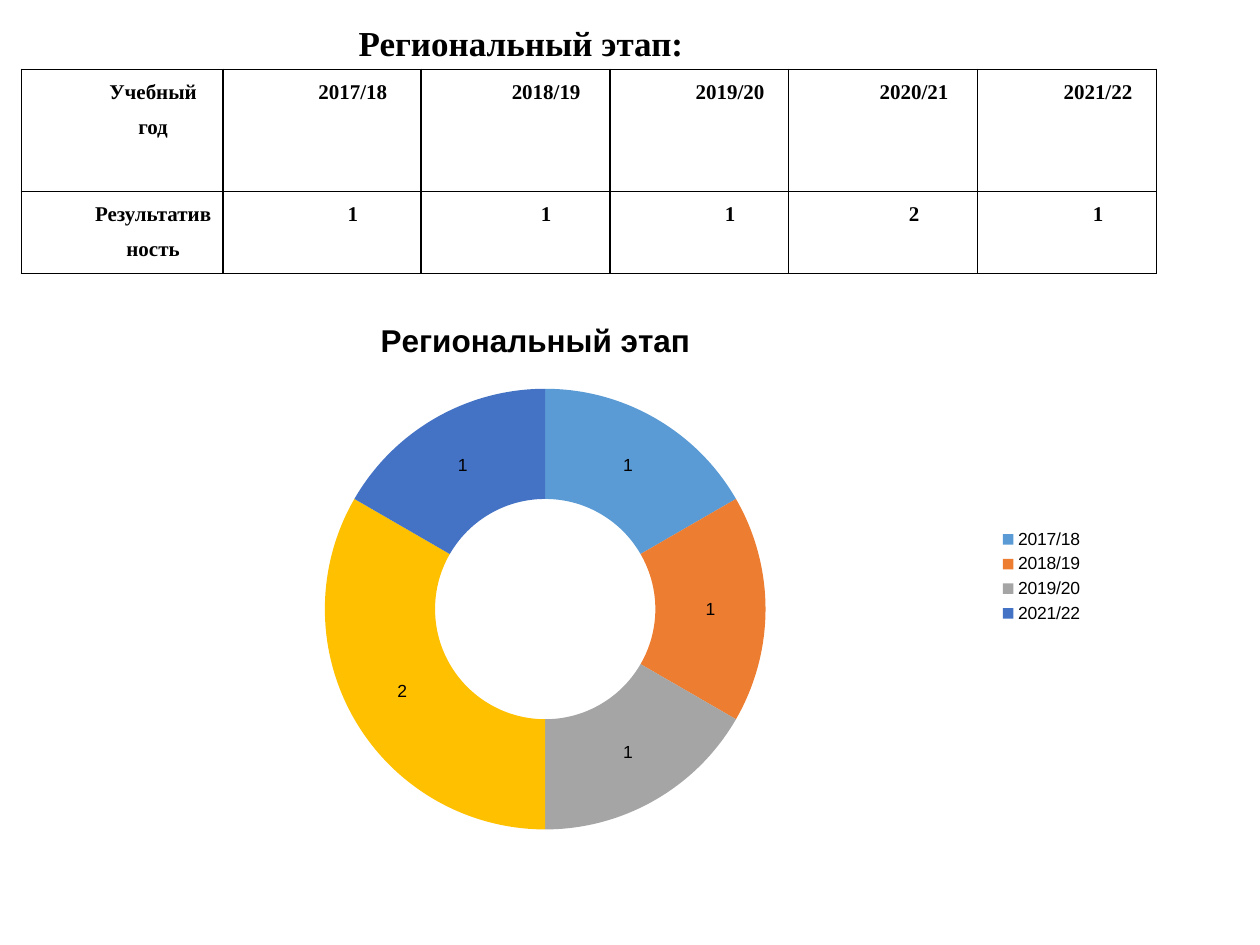
from lxml import etree
from pptx import Presentation, util as u
from pptx.chart.data import CategoryChartData
from pptx.dml.color import RGBColor
from pptx.enum import chart as ch, text
from pptx.oxml import parse_xml
from pptx.oxml.ns import nsdecls, qn


def style(font, size, face, bold=False, color="000000"):
    font.size, font.name, font.bold = u.Pt(size), face, bold
    font.color.rgb = RGBColor.from_string(color)


def place(part, **shares):
    manual = etree.SubElement(part.find(qn("c:layout")), qn("c:manualLayout"))
    if "w" in shares:
        etree.SubElement(manual, qn("c:layoutTarget"), val="inner")
    for axis in "xy":
        etree.SubElement(manual, qn(f"c:{axis}Mode"), val="edge")
    for side, share in shares.items():
        etree.SubElement(manual, qn(f"c:{side}"), val=str(share))


years = ["2017/18", "2018/19", "2019/20", "2020/21", "2021/22"]
results = [1, 1, 1, 2, 1]
colors = ["5B9BD5", "ED7D31", "A5A5A5", "FFC000", "4472C4"]

deck = Presentation()
deck.slide_width, deck.slide_height = u.Inches(10), u.Inches(7.5)
slide = deck.slides.add_slide(deck.slide_layouts[5])

heading = slide.shapes.title
heading.left, heading.top = u.Inches(-0.04), u.Inches(0.1)
heading.width, heading.height = u.Inches(8.35), u.Inches(0.47)
heading.text_frame.text = "Региональный этап:"
heading.text_frame.vertical_anchor = text.MSO_ANCHOR.MIDDLE
heading.text_frame.paragraphs[0].alignment = text.PP_ALIGN.CENTER
style(heading.text_frame.paragraphs[0].font, 20, "Times New Roman", True)

rows = [["Учебный год", *years], ["Результативность", *map(str, results)]]
table = slide.shapes.add_table(
    2, 6, u.Inches(0.17), u.Inches(0.55), u.Inches(9), u.Inches(1.62)
).table
for column, width in zip(table.columns, [1.6, 1.57, 1.5, 1.42, 1.5, 1.42]):
    column.width = u.Inches(width)
for row, height in zip(table.rows, [0.97, 0.65]):
    row.height = u.Inches(height)
for r, row in enumerate(rows):
    for c, words in enumerate(row):
        cell = table.cell(r, c)
        cell.text = words
        cell.margin_left = cell.margin_right = u.Inches(0.07)
        cell.margin_top = cell.margin_bottom = 0
        cell.fill.background()
        paragraph = cell.text_frame.paragraphs[0]
        paragraph.alignment = text.PP_ALIGN.CENTER
        paragraph.line_spacing = 1.5
        indent = paragraph._p.get_or_add_pPr()
        indent.set("marL", str(u.Inches(0.49)))
        indent.set("indent", "0")
        style(paragraph.font, 12, "Times New Roman", True)
        for order, side in enumerate("LRTB"):
            cell._tc.get_or_add_tcPr().insert(order, parse_xml(
                f'<a:ln{side} {nsdecls("a")} w="{u.Pt(1)}"><a:solidFill>'
                f'<a:srgbClr val="000000"/></a:solidFill></a:ln{side}>'))

stage = CategoryChartData()
stage.categories = years
stage.add_series("Региональный этап", results)
ring = slide.shapes.add_chart(
    ch.XL_CHART_TYPE.DOUGHNUT,
    u.Inches(0.75), u.Inches(2.41), u.Inches(7.95), u.Inches(4.33), stage
).chart
style(ring.font, 10, "Arial")

ring.has_title = True
ring.chart_title.text_frame.text = "Региональный этап"
style(ring.chart_title.text_frame.paragraphs[0].font, 18, "Arial", True)
place(ring.chart_title._element, x=0.28, y=0.02)

plot = ring.plots[0]
plot.vary_by_categories = True
place(ring._chartSpace.chart.plotArea, x=0.23, y=0.15, w=0.44, h=0.82)
for index, color in enumerate(colors):
    fill = plot.series[0].points[index].format.fill
    fill.solid()
    fill.fore_color.rgb = RGBColor.from_string(color)
plot.has_data_labels = True
plot.data_labels.show_value = True
plot.data_labels.show_percentage = False
style(plot.data_labels.font, 10, "Arial")

ring.has_legend = True
ring.legend.position = ch.XL_LEGEND_POSITION.RIGHT
ring.legend.include_in_layout = False
style(ring.legend.font, 10, "Arial")
ring.legend._element.find(qn("c:legendPos")).addnext(parse_xml(
    f'<c:legendEntry {nsdecls("c")}><c:idx val="{years.index("2020/21")}"/>'
    '<c:delete val="1"/></c:legendEntry>'))

deck.save("out.pptx")
